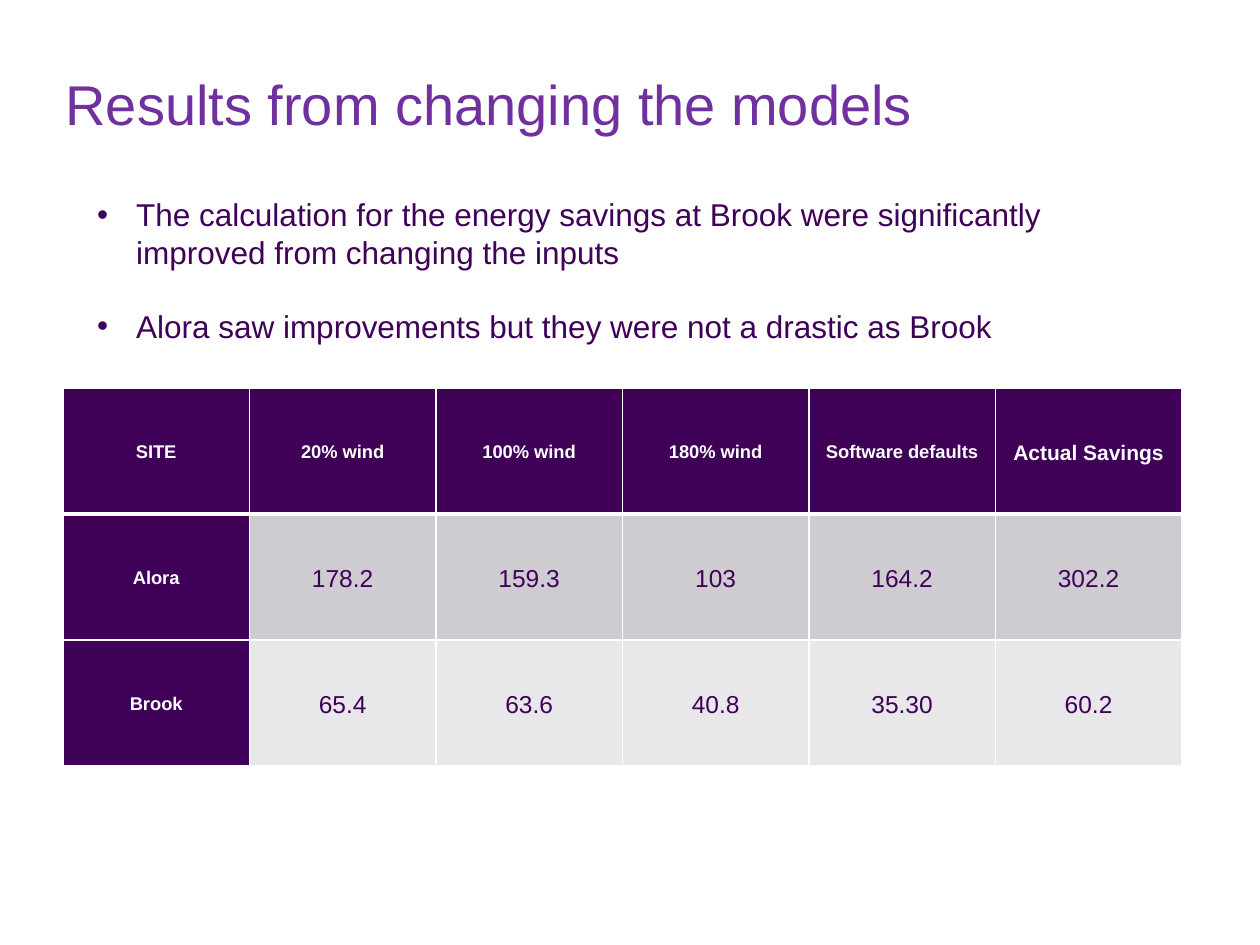
import pptx
import pptx.util
import pptx.dml.color
import pptx.enum.text
import pptx.oxml
import pptx.oxml.ns
from lxml import etree

Inches = pptx.util.Inches
Pt = pptx.util.Pt
ANCHOR = pptx.enum.text.MSO_ANCHOR
ALIGN = pptx.enum.text.PP_ALIGN

COLORS = {
    "title": "7030A0",
    "purple": "3F0058",
    "white": "FFFFFF",
    "band_dark": "CFCCD1",
    "band_light": "E8E7EA",
}

FONTS = {
    "title": {"name": "Arial", "size": Pt(32), "bold": False},
    "body": {"name": "Arial", "size": Pt(18), "bold": False},
    "heading": {"name": "Arial", "size": Pt(10.5), "bold": True},
    "large_heading": {"name": "Arial", "size": Pt(12), "bold": True},
    "value": {"name": "Arial", "size": Pt(14), "bold": False},
}

FINDINGS = [
    "The calculation for the energy savings at Brook were significantly "
    "improved from changing the inputs",
    "Alora saw improvements but they were not a drastic as Brook",
]

SAVINGS = [
    ["SITE", "20% wind", "100% wind", "180% wind", "Software defaults", "Actual Savings"],
    ["Alora", "178.2", "159.3", "103", "164.2", "302.2"],
    ["Brook", "65.4", "63.6", "40.8", "35.30", "60.2"],
]


def rgb(color):
    return pptx.dml.color.RGBColor.from_string(COLORS[color])


def set_all(target, values):
    for attribute, value in values.items():
        setattr(target, attribute, value)


def style_font(font, style, color):
    set_all(font, FONTS[style])
    font.color.rgb = rgb(color)


def place(shape, box):
    left, top, width, height = (Inches(length) for length in box)
    set_all(shape, {"left": left, "top": top, "width": width, "height": height})


def add_element(parent, tag, **attributes):
    return etree.SubElement(parent, pptx.oxml.ns.qn(tag), attributes)


def fill_title(title, box, text):
    place(title, box)
    frame = title.text_frame
    set_all(frame, {"word_wrap": True, "vertical_anchor": ANCHOR.TOP,
                    "auto_size": pptx.enum.text.MSO_AUTO_SIZE.NONE})
    heading = frame.paragraphs[0]
    heading.text = text
    heading.alignment = ALIGN.LEFT
    style_font(heading.font, "title", "title")


def fill_findings(body, box, findings):
    place(body, box)
    frame = body.text_frame
    set_all(frame, {"word_wrap": True, "vertical_anchor": ANCHOR.TOP,
                    "auto_size": pptx.enum.text.MSO_AUTO_SIZE.NONE})
    for index, text in enumerate(findings):
        finding = frame.paragraphs[0] if index == 0 else frame.add_paragraph()
        finding.text = text
        # One empty line's height separates the findings
        finding.space_before = Pt(20.7 if index else 0)
        properties = finding._p.get_or_add_pPr()
        properties.set("marL", str(Inches(0.31)))
        properties.set("indent", str(-Inches(0.31)))
        add_element(properties, "a:buFont", typeface="Arial")
        add_element(properties, "a:buChar", char="•")
        style_font(finding.font, "body", "purple")


def add_borders(cell, bottom_width):
    properties = cell._tc.get_or_add_tcPr()
    widths = {"a:lnL": 1, "a:lnR": 1, "a:lnT": 1, "a:lnB": bottom_width}
    for position, (side, width) in enumerate(widths.items()):
        line = add_element(properties, side, w=str(Pt(width)))
        add_element(add_element(line, "a:solidFill"), "a:srgbClr", val=COLORS["white"])
        # Borders precede the cell fill
        properties.insert(position, line)


def fill_cell(cell, text, fill, style, color):
    set_all(cell, {"vertical_anchor": ANCHOR.MIDDLE,
                   "margin_left": Inches(0.07), "margin_right": Inches(0.07),
                   "margin_top": 0, "margin_bottom": 0})
    cell.fill.solid()
    cell.fill.fore_color.rgb = rgb(fill)
    label = cell.text_frame.paragraphs[0]
    set_all(label, {"text": text, "alignment": ALIGN.CENTER, "line_spacing": 1.15})
    style_font(label.runs[0].font, style, color)


def add_savings_table(slide, box, rows):
    left, top, width, height = (Inches(length) for length in box)
    column_count = len(rows[0])
    table = slide.shapes.add_table(
        len(rows), column_count, left, top, width, height).table
    table.first_col = True
    bands = ["band_dark", "band_light"]
    for r, row in enumerate(rows):
        for c, text in enumerate(row):
            cell = table.cell(r, c)
            if r == 0 or c == 0:
                style = "large_heading" if c == column_count - 1 else "heading"
                fill_cell(cell, text, "purple", style, "white")
            else:
                fill_cell(cell, text, bands[(r - 1) % 2], "value", "purple")
            add_borders(cell, 3 if r == 0 else 1)
        # The heavier line under the header is shared with the next row
        if r == 1:
            for cell in table.rows[r].cells:
                cell._tc.tcPr.find(pptx.oxml.ns.qn("a:lnT")).set("w", str(Pt(3)))


def main():
    presentation = pptx.Presentation()
    presentation.slide_width = Inches(10)
    presentation.slide_height = Inches(7.5)
    slide = presentation.slides.add_slide(presentation.slide_layouts[1])

    # Title
    fill_title(slide.shapes.title, (0.42, 0.5, 8.58, 0.64),
               "Results from changing the models")
    # Savings by site and model input
    add_savings_table(slide, (0.5, 3.08, 8.88, 3), SAVINGS)
    # Findings
    fill_findings(slide.placeholders[1], (0.67, 1.5, 8.33, 1.92), FINDINGS)

    presentation.save("out.pptx")


if __name__ == "__main__":
    main()
